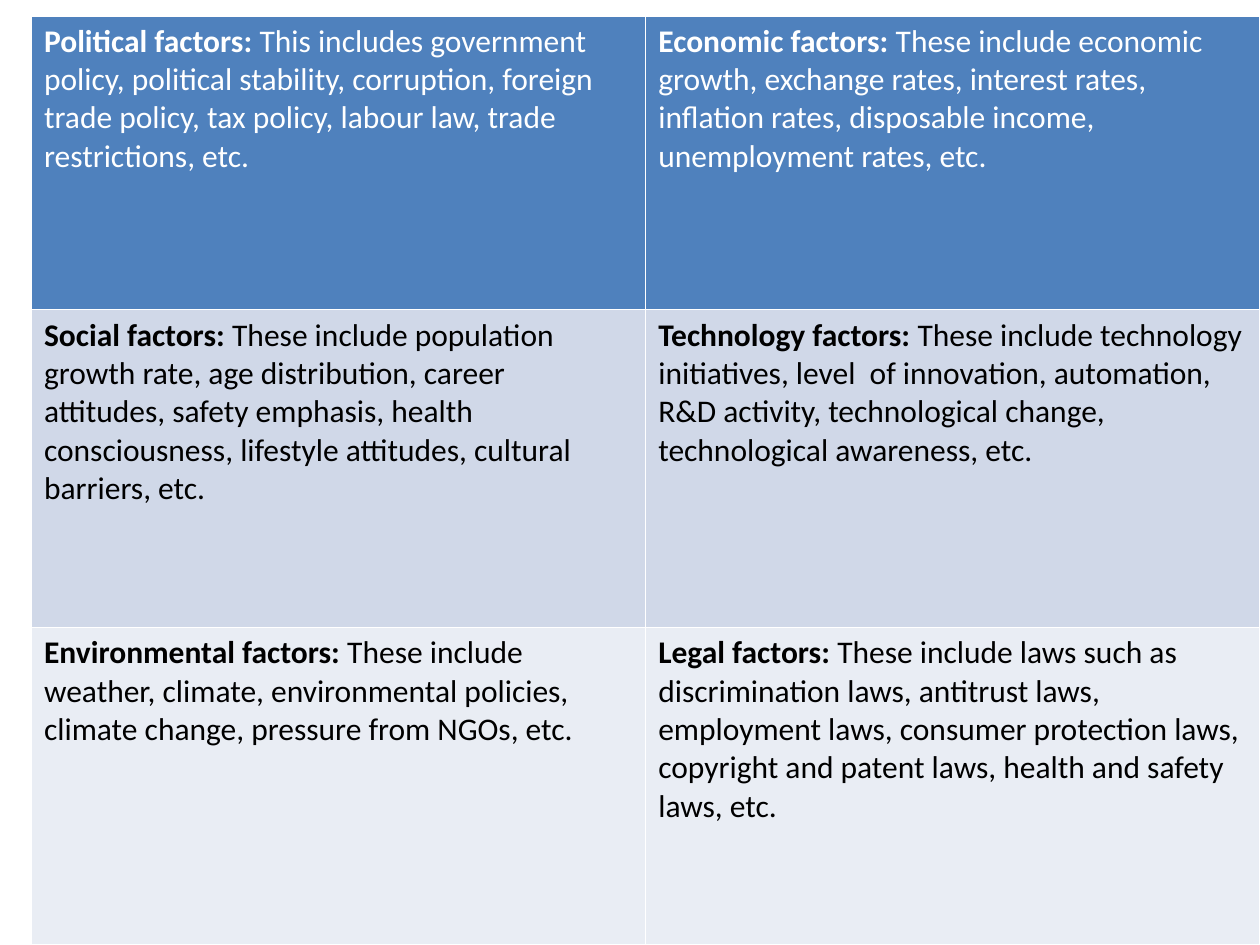
from pptx import Presentation
from pptx.dml.color import RGBColor
from pptx.util import Pt

# Each row: fill, text colour, row height, then (heading, description) per cell
ROWS = [
    ("4F81BD", "FFFFFF", 168, [
        ("Political factors: ",
         "This includes government policy, political stability, corruption, foreign "
         "trade policy, tax policy, labour law, trade restrictions, etc."),
        ("Economic factors: ",
         "These include economic growth, exchange rates, interest rates, inflation "
         "rates, disposable income, unemployment rates, etc."),
    ]),
    ("D0D8E8", "000000", 181.5, [
        ("Social factors: ",
         "These include population growth rate, age distribution, career attitudes, "
         "safety emphasis, health consciousness, lifestyle attitudes, cultural "
         "barriers, etc."),
        ("Technology factors: ",
         "These include technology initiatives, level  of innovation, automation, "
         "R&D activity, technological change, technological awareness, etc."),
    ]),
    ("E9EDF4", "000000", 181.5, [
        ("Environmental factors: ",
         "These include weather, climate, environmental policies, climate change, "
         "pressure from NGOs, etc."),
        ("Legal factors: ",
         "These include laws such as discrimination laws, antitrust laws, employment "
         "laws, consumer protection laws, copyright and patent laws, health and "
         "safety laws, etc."),
    ]),
]
COLUMN_WIDTH = 351


def color(hex_string):
    return RGBColor.from_string(hex_string)


presentation = Presentation()
presentation.slide_width = Pt(720)
presentation.slide_height = Pt(540)
slide = presentation.slides.add_slide(presentation.slide_layouts[6])

# The default table style supplies the white cell borders
table_height = sum(height for _, _, height, _ in ROWS)
table = slide.shapes.add_table(
    len(ROWS), 2, Pt(18), Pt(9), Pt(2 * COLUMN_WIDTH), Pt(table_height)).table
for column in table.columns:
    column.width = Pt(COLUMN_WIDTH)

for row, (fill, text_color, height, factors) in zip(table.rows, ROWS):
    row.height = Pt(height)
    for cell, factor in zip(row.cells, factors):
        cell.fill.solid()
        cell.fill.fore_color.rgb = color(fill)
        paragraph = cell.text_frame.paragraphs[0]
        for text, bold in zip(factor, (True, False)):
            run = paragraph.add_run()
            run.text = text
            for name, value in {"name": "Calibri", "size": Pt(18), "bold": bold}.items():
                setattr(run.font, name, value)
            run.font.color.rgb = color(text_color)

presentation.save("out.pptx")
